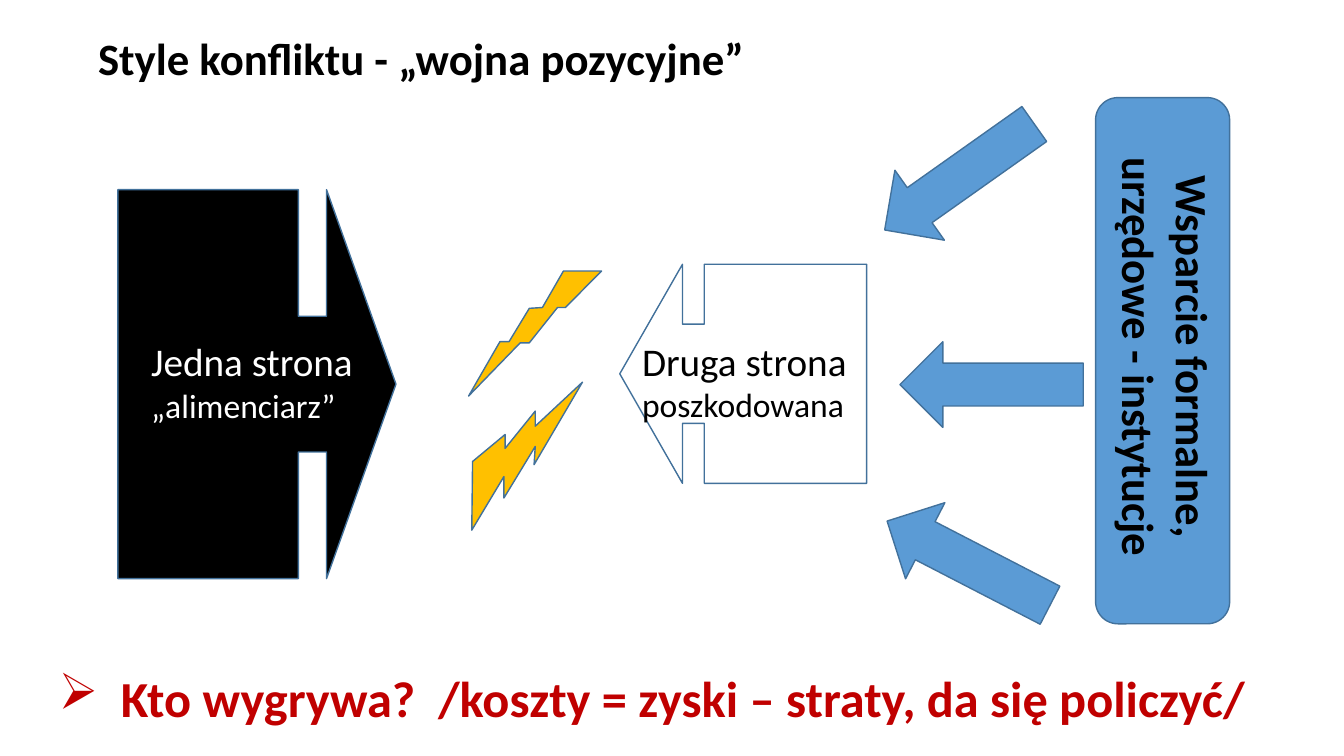
"""Builds the slide on positional conflict between two parties."""
from lxml import etree
from pptx import Presentation
from pptx.dml.color import RGBColor
from pptx.enum.shapes import MSO_SHAPE
from pptx.enum.text import MSO_ANCHOR, PP_ALIGN
from pptx.oxml.ns import qn
from pptx.util import Cm, Pt

ARROW, ROUND = MSO_SHAPE.RIGHT_ARROW, MSO_SHAPE.ROUNDED_RECTANGLE
LEFT, CENTER = PP_ALIGN.LEFT, PP_ALIGN.CENTER
TOP, MIDDLE = MSO_ANCHOR.TOP, MSO_ANCHOR.MIDDLE
FONT = "Calibri"
BLACK, WHITE, BLUE, EDGE = "000000", "FFFFFF", "5B9BD5", "42719B"
GOLD, RED = "FFC000", "C00000"

TITLE = "Style konfliktu - „wojna pozycyjne”"
SUPPORT = "Wsparcie formalne, urzędowe - instytucje"
QUESTION = "Kto wygrywa?  /koszty = zyski – straty, da się policzyć/"
BOLTS = [
    [(15.16, 6.83), (14.25, 7.75), (14.05, 7.75), (13.34, 8.64),
     (13.11, 8.64), (11.81, 9.98), (12.6, 8.61), (12.83, 8.61),
     (13.34, 7.77), (13.67, 7.75), (14.2, 6.83)],
    [(11.91, 11.63), (12.73, 10.95), (12.73, 11.3), (13.49, 10.36),
     (13.49, 10.74), (14.68, 9.63), (13.46, 11.71), (13.49, 11.25),
     (12.7, 12.55), (12.7, 12.01), (11.89, 13.36)],
]
SIDES = [
    {"xs": (2.97, 7.52, 8.23, 9.98), "mid": 9.68, "half": 4.9, "neck": 1.71,
     "fill": BLACK, "ink": WHITE, "box": (3.68, 8.38, 5.59, 2.51),
     "lines": [("Jedna strona", 28), ("„alimenciarz”", 24)]},
    {"xs": (21.84, 17.75, 17.2, 15.62), "mid": 9.42, "half": 2.76, "neck": 1.25,
     "fill": WHITE, "ink": BLACK, "box": (16.05, 8.36, 5.79, 2.51),
     "lines": [("Druga strona", 28), ("poszkodowana", 24)]},
]
HELP = [(21.87, 3.38, 144.7), (22.68, 8.61, 180), (22.1, 13.11, 207.3)]


def color(code):
    return RGBColor.from_string(code)


def paint(shape, fill):
    shape.shadow.inherit = False
    shape.fill.solid()
    shape.fill.fore_color.rgb = color(fill)
    shape.line.color.rgb = color(EDGE)
    shape.line.width = Pt(1)


def outline(shapes, points, fill):
    points = [(Cm(x), Cm(y)) for x, y in points]
    pen = shapes.build_freeform(*points[0])
    pen.add_line_segments(points[1:], close=True)
    paint(pen.convert_to_shape(), fill)


def notched(xs, mid, half, neck):
    back, near, far, tip = xs
    upper = [(back, half), (near, half), (near, neck), (far, neck), (far, half)]
    return ([(x, mid - y) for x, y in upper] + [(tip, mid)]
            + [(x, mid + y) for x, y in reversed(upper)])


def preset(shapes, kind, box, turn=0):
    shape = shapes.add_shape(kind, *map(Cm, box))
    shape.rotation = turn
    paint(shape, BLUE)


def write(shape, lines, ink, bold=False, align=LEFT, anchor=TOP, wrap=True):
    frame = shape.text_frame
    frame.word_wrap = wrap
    frame.vertical_anchor = anchor
    frame.margin_left = frame.margin_right = Cm(0.13)
    frame.margin_top = frame.margin_bottom = Cm(0.13)
    for i, (text, size) in enumerate(lines):
        para = frame.add_paragraph() if i else frame.paragraphs[0]
        para.alignment = align
        run = para.add_run()
        run.text = text
        run.font.name, run.font.size, run.font.bold = FONT, Pt(size), bold
        run.font.color.rgb = color(ink)
    return frame.paragraphs[0]


def label(shapes, box, *args, **kw):
    shape = shapes.add_textbox(*map(Cm, box))
    return shape, write(shape, *args, **kw)


def bullet(para, sign, gap):
    props = para._p.get_or_add_pPr()
    props.set("marL", str(Cm(gap)))
    props.set("indent", str(-Cm(gap)))
    etree.SubElement(props, qn("a:buChar")).set("char", sign)


def main():
    deck = Presentation()
    deck.slide_width, deck.slide_height = Cm(33.87), Cm(19.05)
    slide = deck.slides.add_slide(deck.slide_layouts[5])
    shapes = slide.shapes

    title = shapes.title
    title.left, title.top, title.width, title.height = map(
        Cm, (2.34, -0.05, 29.21, 3.15))
    head = write(title, [(TITLE, 32)], BLACK, bold=True, anchor=MIDDLE)
    head.line_spacing = 0.9

    for bolt in BOLTS:
        outline(shapes, bolt, GOLD)
    for side in SIDES:
        points = notched(side["xs"], side["mid"], side["half"], side["neck"])
        outline(shapes, points, side["fill"])
        label(shapes, side["box"], side["lines"], side["ink"])
    for x, y, turn in HELP:
        preset(shapes, ARROW, (x, y, 4.62, 2.16), turn)

    preset(shapes, ROUND, (27.61, 2.46, 3.38, 13.26))
    box, _ = label(shapes, (23.8, 7.49, 11.18, 3), [(SUPPORT, 32)], BLACK,
                   bold=True, align=CENTER)
    box.rotation = 90
    _, para = label(shapes, (1.35, 16.69, 30.45, 1.8), [(QUESTION, 36)], RED,
                    bold=True, wrap=False)
    bullet(para, "➢", 1.57)
    deck.save("out.pptx")


if __name__ == "__main__":
    main()
